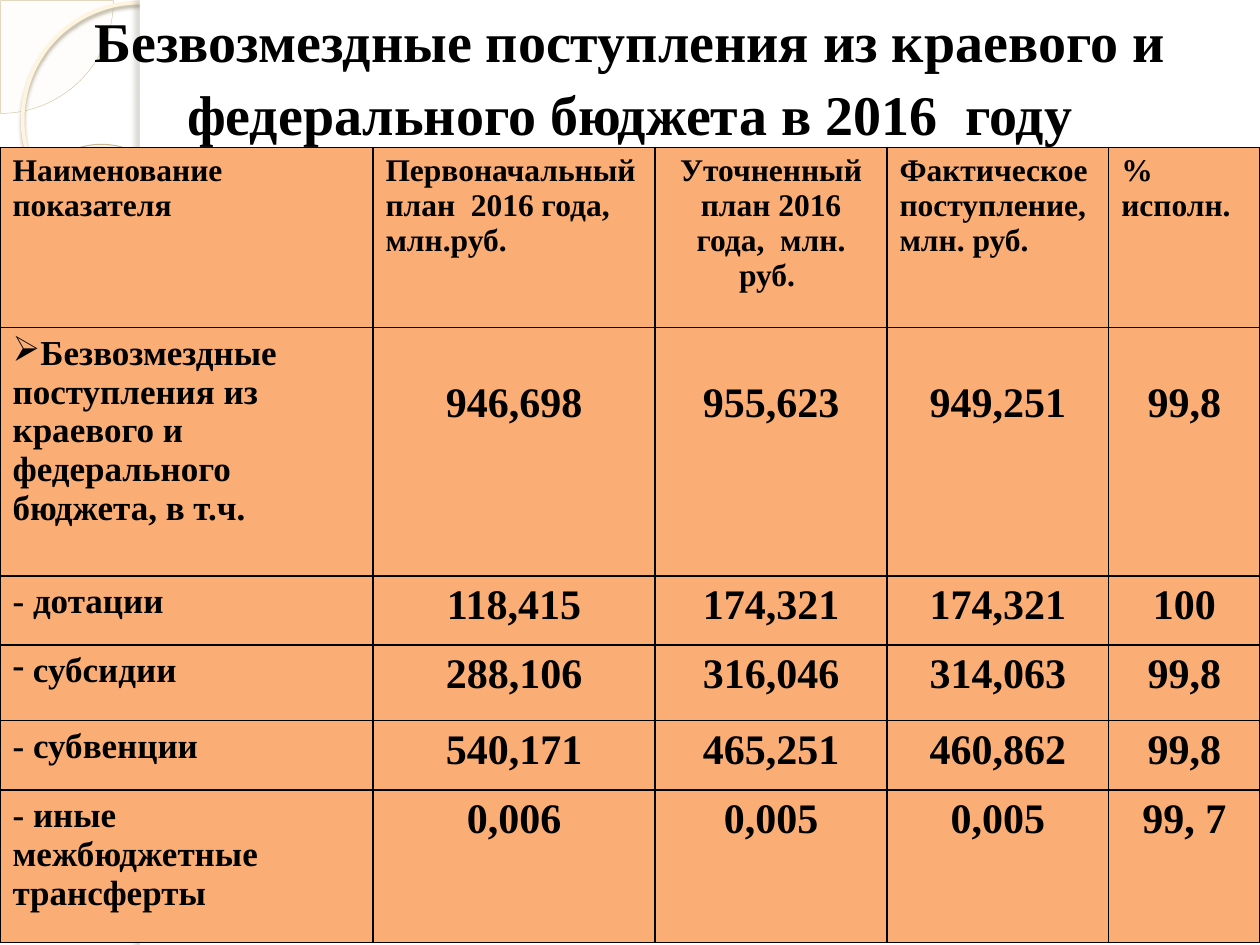
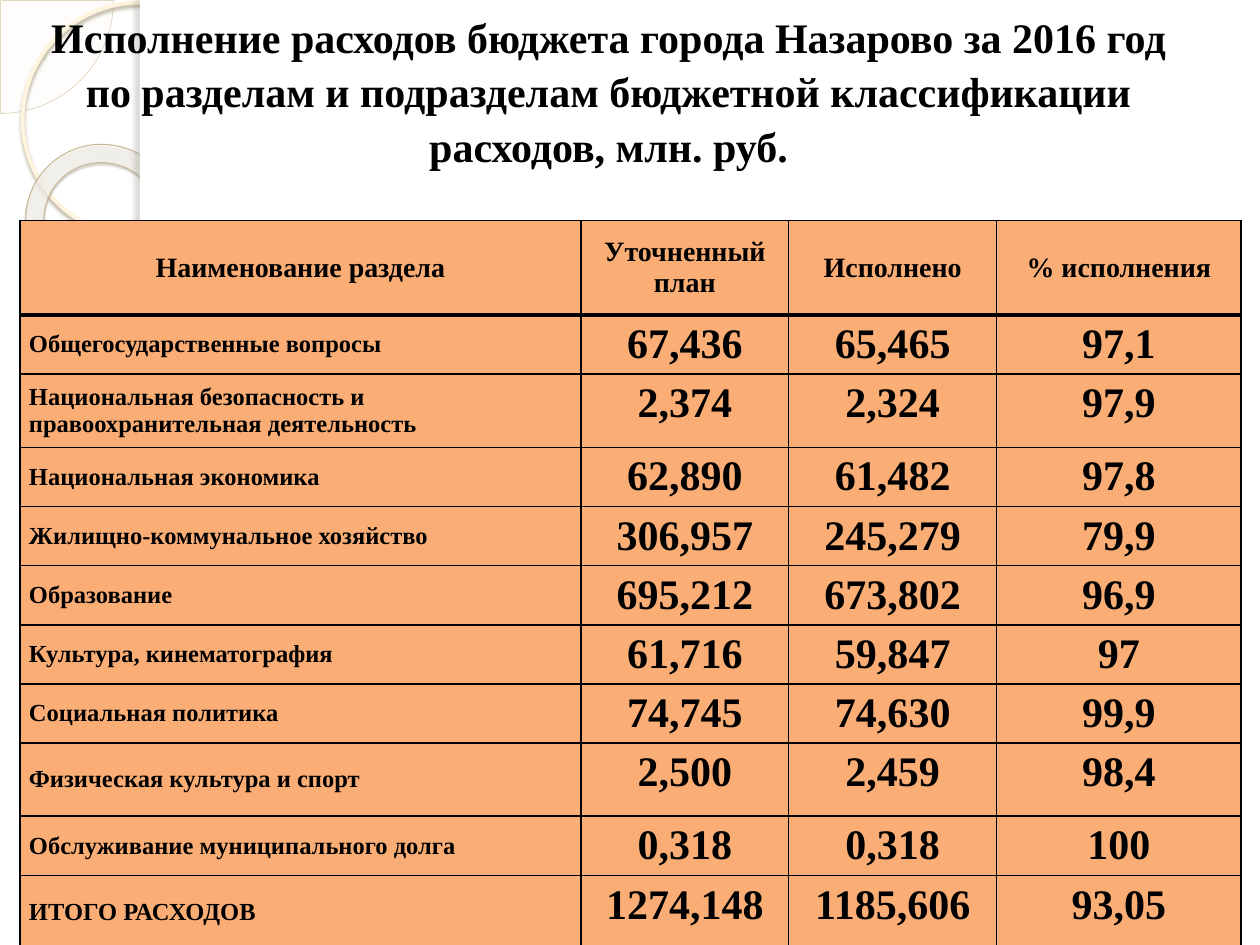
from dataclasses import dataclass
from typing import Any, NamedTuple, Optional

import lxml.etree
import pptx
import pptx.dml.color
import pptx.enum.shapes
import pptx.enum.text
import pptx.oxml.ns
import pptx.util

Inches = pptx.util.Inches
Pt = pptx.util.Pt
RGB = pptx.dml.color.RGBColor
Form = pptx.enum.shapes.MSO_SHAPE
Align = pptx.enum.text.PP_ALIGN
Anchor = pptx.enum.text.MSO_ANCHOR
qn = pptx.oxml.ns.qn

BLACK = RGB(0, 0, 0)
WHITE = RGB(255, 255, 255)
PEACH = RGB(0xFA, 0xAE, 0x76)
CREAM = RGB(0xFE, 0xFA, 0xF4)
SAND = RGB(0xD3, 0xC3, 0x9F)
IVORY = RGB(0xFF, 0xF5, 0xDE)
KHAKI = RGB(0xC7, 0xB8, 0x93)
TAUPE = RGB(0xB0, 0xA6, 0x8F)
UMBER = RGB(0x5A, 0x54, 0x44)
STONE = RGB(0x73, 0x6F, 0x63)
GLOW = ((0, RGB(0xFF, 0xFC, 0xF6), 70),
        (70, RGB(0xFF, 0xFE, 0xFB), 55),
        (100, RGB(0xF0, 0xD2, 0x8E), 60))
FONT = {"name": "Times New Roman", "bold": True}


class Shade(NamedTuple):
    color: RGB
    alpha: int
    blur: float
    dist: float
    angle: int


class Label(NamedTuple):
    text: str
    bullet: str = ""


@dataclass
class Decor:
    form: Any
    box: tuple
    fill: Optional[RGB] = None
    alpha: int = 100
    line: Optional[RGB] = None
    width: float = 0
    shade: Optional[Shade] = None
    adjust: tuple = ()
    turn: float = 0
    glow: tuple = ()


@dataclass
class Grid:
    left: float
    top: float
    cols: tuple
    rows: tuple
    head: tuple
    data: tuple
    aligns: tuple
    head_size: int
    name_size: int
    name_fmt: dict
    rule: int = 1
    drop: float = 0.05


DECOR = (
    Decor(Form.PIE, (-0.89, -0.89, 1.79, 1.79), CREAM, 33, SAND, 0.25,
          adjust=(0, 54.02)),
    Decor(Form.OVAL, (0.18, 0.02, 1.86, 1.86), line=IVORY, width=2.15,
          shade=Shade(TAUPE, 85, 2, 2, 90)),
    Decor(Form.DONUT, (0.2, 1.15, 1.23, 1.21), line=KHAKI, width=0.58,
          shade=Shade(UMBER, 35, 1, 1.2, 75), adjust=(0.12,), turn=38.6,
          glow=GLOW),
    Decor(Form.RECTANGLE, (1.11, 0, 8.89, 7.5), WHITE),
    Decor(Form.RECTANGLE, (1.11, 0, 0.08, 7.5), WHITE,
          shade=Shade(STONE, 25, 3, 3, 180)),
)

INCOME = Grid(
    0, 1.17, (2.96, 2.24, 1.84, 1.76, 1.2),
    (1.43, 1.97, 0.55, 0.6, 0.55, 1.21),
    ("Наименование показателя", "Первоначальный план  2016 года, млн.руб.",
     "Уточненный план 2016 года,  млн. руб. ",
     "Фактическое поступление, млн. руб.", "%\nисполн."),
    ((Label("Безвозмездные поступления из краевого и федерального бюджета, в т.ч. ", "➢"),
      "946,698", "955,623", "949,251", "99,8"),
     (Label("- дотации"), "118,415", "174,321", "174,321", "100"),
     (Label(" субсидии", "-"), "288,106", "316,046", "314,063", "99,8"),
     (Label("- субвенции"), "540,171", "465,251", "460,862", "99,8"),
     (Label("- иные межбюджетные трансферты"), "0,006", "0,005", "0,005", "99, 7")),
    (Align.LEFT, Align.LEFT, Align.CENTER, Align.LEFT, Align.LEFT),
    18, 20, {}, drop=0.42)

TIGHT = {"vertical_anchor": Anchor.MIDDLE, "margin_left": Inches(0.07),
         "margin_right": Inches(0.07), "margin_top": 0, "margin_bottom": 0}
LOW, TALL = 0.47, 0.58
SPENDING = Grid(
    0.16, 1.75, (4.45, 1.65, 1.65, 1.94),
    (0.75, LOW, TALL, LOW, LOW, LOW, LOW, LOW, TALL, LOW, TALL),
    ("Наименование раздела", "Уточненный план", "Исполнено", "% исполнения"),
    ((Label("Общегосударственные вопросы"), "67,436", "65,465", "97,1"),
     (Label("Национальная безопасность и правоохранительная деятельность"),
      "2,374", "2,324", "97,9"),
     (Label("Национальная экономика"), "62,890", "61,482", "97,8"),
     (Label("Жилищно-коммунальное хозяйство"), "306,957", "245,279", "79,9"),
     (Label("Образование"), "695,212", "673,802", "96,9"),
     (Label("Культура, кинематография"), "61,716", "59,847", "97"),
     (Label("Социальная политика"), "74,745", "74,630", "99,9"),
     (Label("Физическая культура и спорт"), "2,500", "2,459", "98,4"),
     (Label("Обслуживание муниципального долга"), "0,318", "0,318", "100"),
     (Label("ИТОГО РАСХОДОВ"), "1274,148", "1185,606", "93,05")),
    (Align.CENTER,) * 4, 16, 14, TIGHT, rule=2)


def apply(item: Any, values: dict) -> None:
    for key, value in values.items():
        setattr(item, key, value)


def node(parent: Any, tag: str, **attrs: Any) -> Any:
    """Add an XML child, with numbers turned to text."""
    return lxml.etree.SubElement(parent, qn(tag), {k: str(v) for k, v in attrs.items()})


def tint(parent: Any, color: RGB, alpha: int = 100) -> None:
    node(node(parent, "a:srgbClr", val=color), "a:alpha", val=alpha * 1000)


def write(frame: Any, text: str, size: int, align: Any) -> None:
    frame.text = text
    for para in frame.paragraphs:
        para.alignment = align
        apply(para.font, FONT | {"size": Pt(size)})
        para.font.color.rgb = BLACK
        for run in para.runs:
            apply(run.font, FONT | {"size": Pt(size)})
            run.font.color.rgb = BLACK


def add_glow(props: Any, stops: tuple) -> None:
    """Swap the empty fill for a round gradient."""
    blank = props.find(qn("a:noFill"))
    grad = node(props, "a:gradFill", rotWithShape=1)
    chain = node(grad, "a:gsLst")
    for pos, color, alpha in stops:
        tint(node(chain, "a:gs", pos=pos * 1000), color, alpha)
    node(node(grad, "a:path", path="circle"), "a:fillToRect",
         l=-408000, t=-50000, r=508000, b=150000)
    props.replace(blank, grad)


def add_decor(slide: Any, item: Decor) -> Any:
    shape = slide.shapes.add_shape(item.form, *map(Inches, item.box))
    shape.rotation = item.turn
    for pos, value in enumerate(item.adjust):
        shape.adjustments[pos] = value
    props = shape.element.spPr
    if item.fill is None:
        shape.fill.background()
    else:
        shape.fill.solid()
        shape.fill.fore_color.rgb = item.fill
        if item.alpha < 100:
            node(props.find(qn("a:solidFill"))[0], "a:alpha", val=item.alpha * 1000)
    if item.glow:
        add_glow(props, item.glow)
    if item.line is None:
        shape.line.fill.background()
    else:
        shape.line.color.rgb = item.line
        shape.line.width = Pt(item.width)
    shape.shadow.inherit = False
    if item.shade:
        shade = item.shade
        tint(node(props.find(qn("a:effectLst")), "a:outerShdw",
                  blurRad=Pt(shade.blur), dist=Pt(shade.dist),
                  dir=shade.angle * 60000, algn="tl", rotWithShape=0),
             shade.color, shade.alpha)
    return shape


def move_decor(slide: Any) -> None:
    """Place the shared corner shapes on the layout, behind its placeholders."""
    first = slide.slide_layout.shapes[0].element
    for num, item in enumerate(DECOR, 20):
        part = add_decor(slide, item).element
        part.nvSpPr.cNvPr.id = num
        first.addprevious(part)


def set_title(slide: Any, text: str, box: tuple, size: int) -> None:
    title = slide.shapes.title
    apply(title, dict(zip(("left", "top", "width", "height"), map(Inches, box))))
    frame = title.text_frame
    apply(frame, {"word_wrap": True, "vertical_anchor": Anchor.MIDDLE,
                  "auto_size": pptx.enum.text.MSO_AUTO_SIZE.NONE})
    write(frame, text, size, Align.CENTER)
    frame.paragraphs[0].line_spacing = 1.08


def set_cell(cell: Any, base: int) -> None:
    """Draw the borders and the fill; base is the width of the lower border."""
    props = cell._tc.get_or_add_tcPr()
    for side in "LRTB":
        width = base if side == "B" else 1
        line = node(props, f"a:ln{side}", w=Pt(width))
        tint(node(line, "a:solidFill"), BLACK)
    cell.fill.solid()
    cell.fill.fore_color.rgb = PEACH


def set_bullet(para: Any, mark: str) -> None:
    props = para._p.get_or_add_pPr()
    props.set("marL", "0")
    props.set("indent", "0")
    node(props, "a:buChar", char=mark)


def add_grid(slide: Any, grid: Grid) -> None:
    table = slide.shapes.add_table(
        len(grid.rows), len(grid.cols), Inches(grid.left), Inches(grid.top),
        Inches(sum(grid.cols)), Inches(sum(grid.rows))).table
    apply(table, {"first_row": False, "horz_banding": False})
    for col, width in zip(table.columns, grid.cols):
        col.width = Inches(width)
    for row, height in zip(table.rows, grid.rows):
        row.height = Inches(height)
    for r, line in enumerate((grid.head, *grid.data)):
        for c, value in enumerate(line):
            cell = table.cell(r, c)
            set_cell(cell, grid.rule if r == 0 else 1)
            if r == 0:
                apply(cell, grid.name_fmt)
                write(cell.text_frame, value, grid.head_size, grid.aligns[c])
            elif c == 0:
                apply(cell, grid.name_fmt)
                write(cell.text_frame, value.text, grid.name_size, Align.LEFT)
                if value.bullet:
                    set_bullet(cell.text_frame.paragraphs[0], value.bullet)
            else:
                if r == 1:
                    cell.margin_top = Inches(grid.drop)
                write(cell.text_frame, value, 24, Align.CENTER)


def main() -> None:
    deck = pptx.Presentation()
    apply(deck, {"slide_width": Inches(10), "slide_height": Inches(7.5)})
    layout = deck.slide_layouts.get_by_name("Title Only")
    pages = (
        ("Безвозмездные поступления из краевого и федерального бюджета в 2016  году",
         (0, 0, 10, 1.17), 32, INCOME),
        ("Исполнение расходов бюджета города Назарово за 2016 год по разделам "
         "и подразделам бюджетной классификации расходов, млн. руб.",
         (0.16, 0, 9.34, 1.41), 24, SPENDING),
    )
    for num, (text, box, size, grid) in enumerate(pages):
        slide = deck.slides.add_slide(layout)
        if num == 0:
            move_decor(slide)
        set_title(slide, text, box, size)
        add_grid(slide, grid)
    deck.save("out.pptx")


if __name__ == "__main__":
    main()
